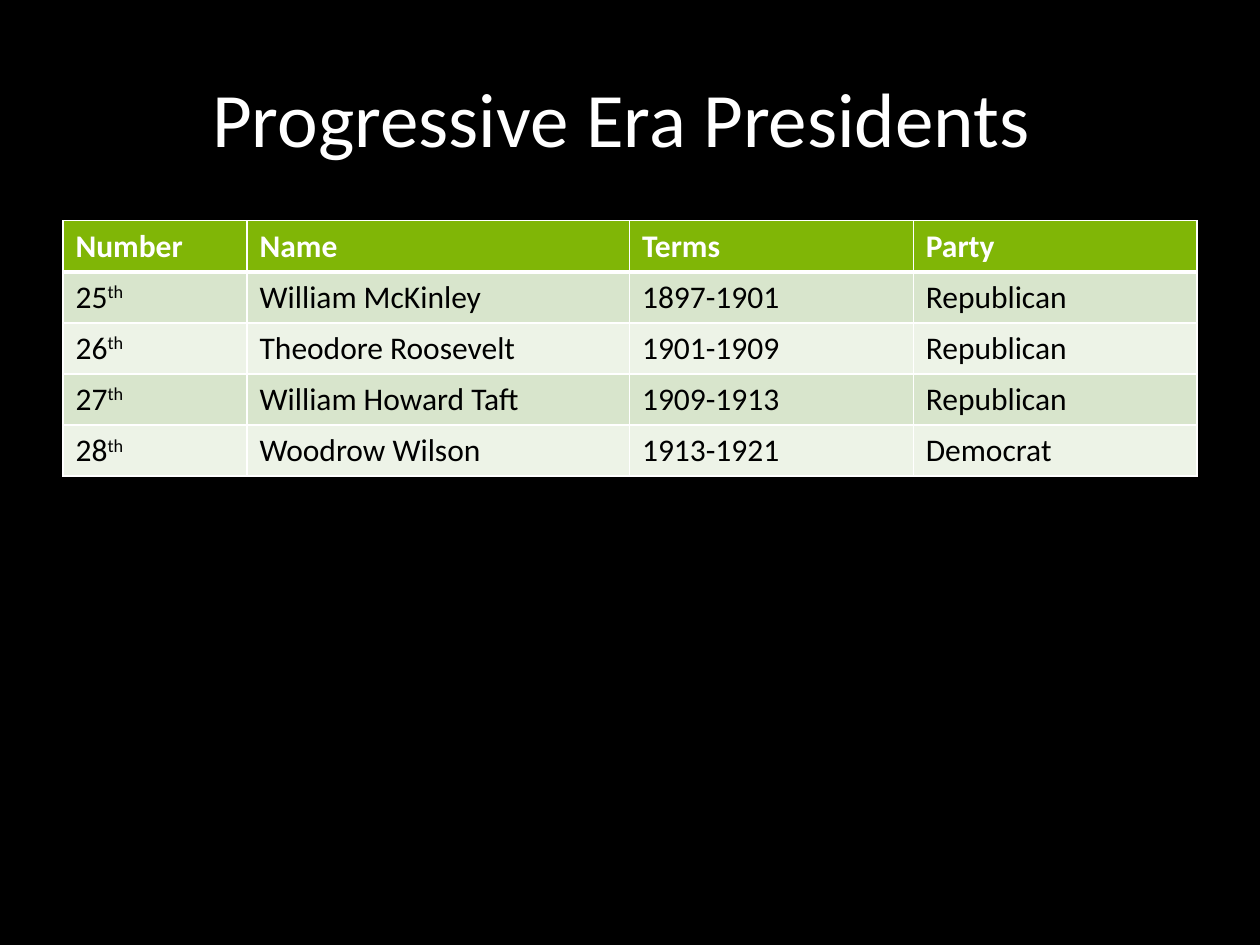
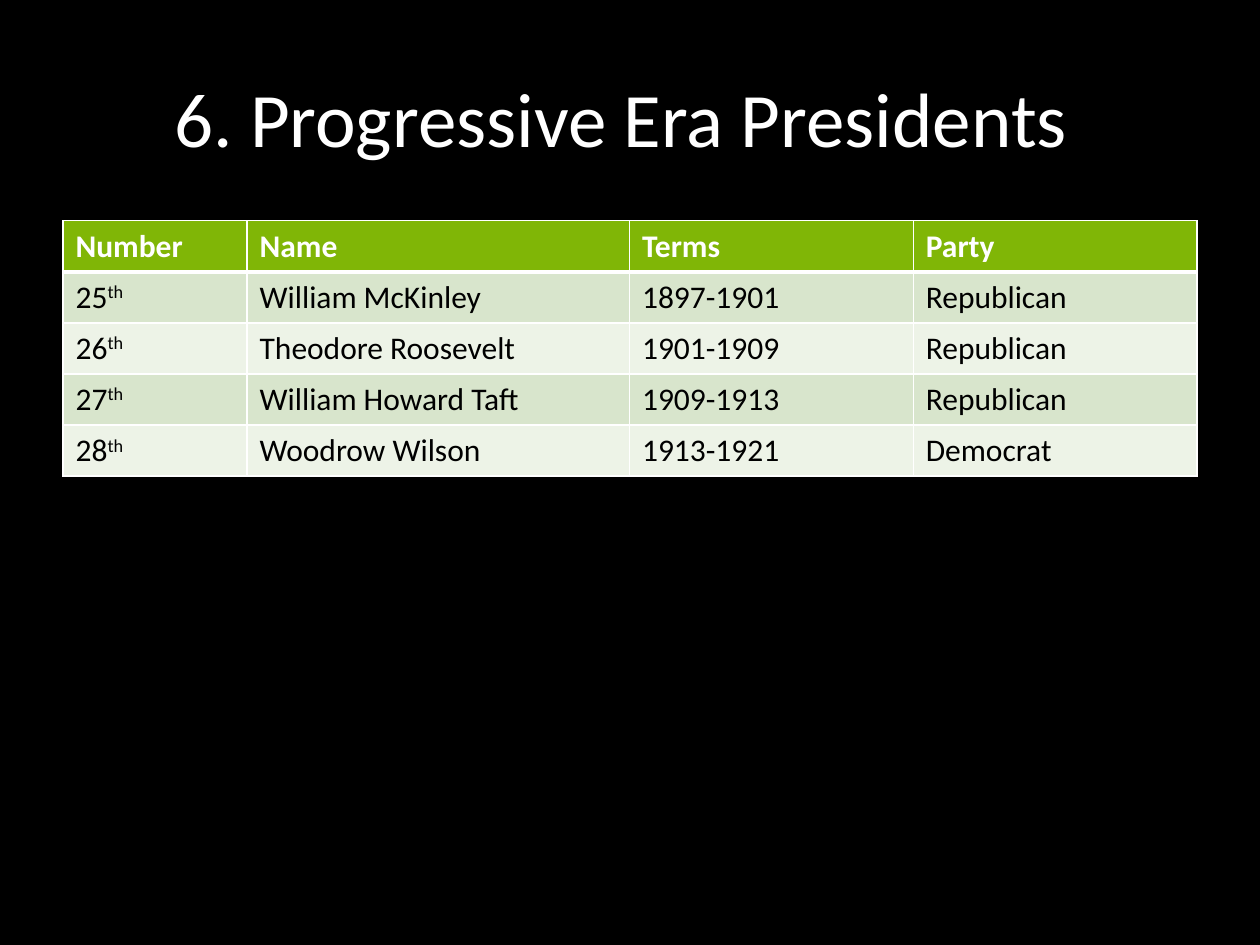
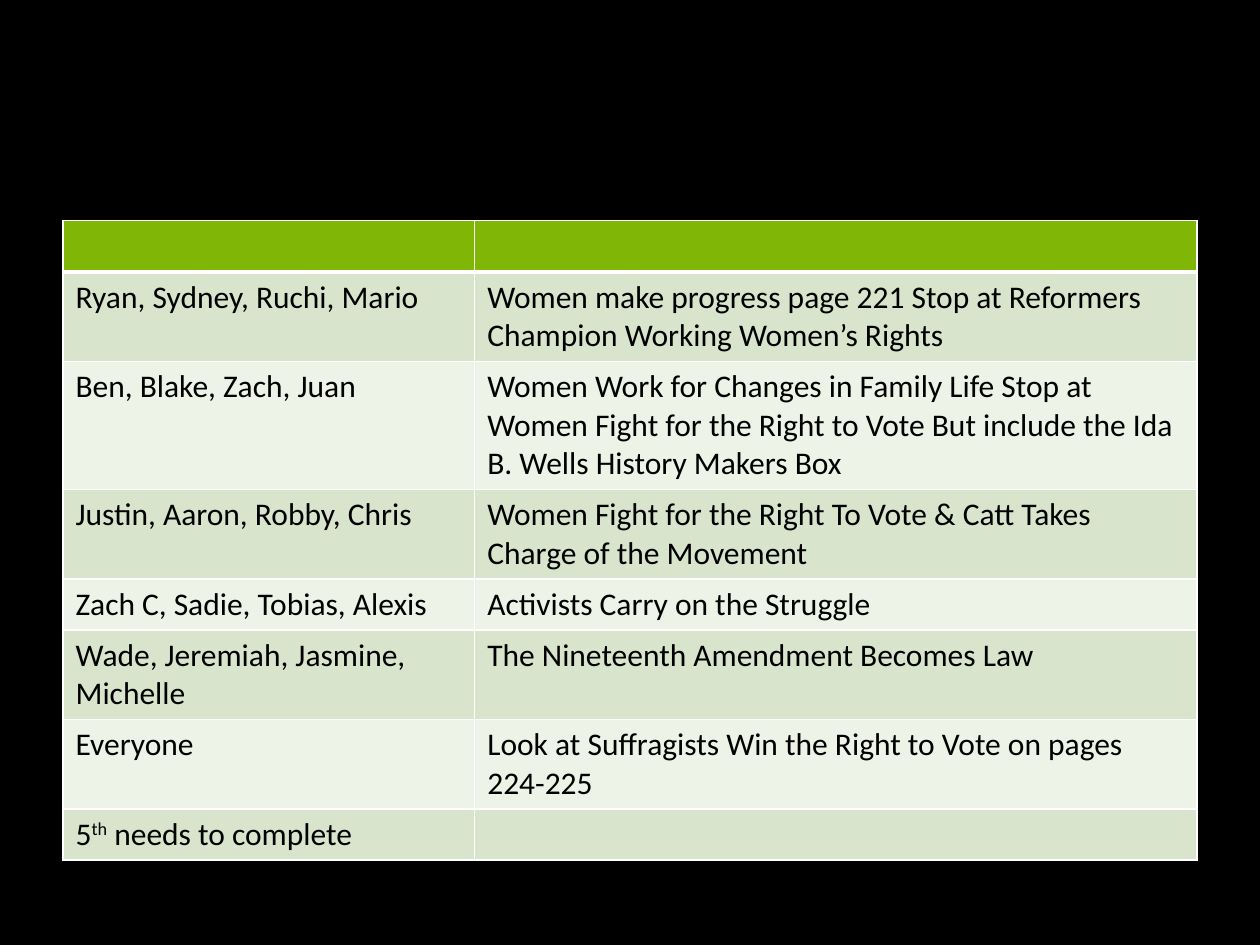
from dataclasses import dataclass

from lxml import etree
from pptx import Presentation
from pptx import util as u
from pptx.dml.color import RGBColor
from pptx.enum import text
from pptx.oxml.ns import qn
from pptx.slide import Slide
from pptx.table import _Cell
from pptx.text.text import _Paragraph

FONT = "Calibri"
COLORS = {
    "background": "000000",
    "title": "FFFFFF",
    "header": "80B606",
    "header_text": "FFFFFF",
    "odd_row": "D8E5CC",
    "even_row": "EDF3E7",
    "body_text": "000000",
    "border": "FFFFFF",
}
LEFT, WIDTH = u.Cm(1.27), u.Cm(22.86)
TITLE_TOP, TITLE_HEIGHT = u.Cm(0.76), u.Cm(3.18)
TABLE_TOP, ROW_HEIGHT = u.Cm(4.45), u.Cm(1.03)
TITLE_ONLY, BLANK = 5, 6
SUPERSCRIPT_MARK = "^"


@dataclass(frozen=True)
class Grid:
    column_widths: tuple[float, ...]
    rows: tuple[tuple[str, ...], ...]
    height: float


@dataclass(frozen=True)
class Page:
    title: str
    grid: Grid


PRESIDENTS = Grid(
    (3.71, 7.71, 5.72, 5.72),
    (
        ("Number", "Name", "Terms", "Party"),
        ("25^th", "William McKinley", "1897-1901", "Republican"),
        ("26^th", "Theodore Roosevelt", "1901-1909", "Republican"),
        ("27^th", "William Howard Taft", "1909-1913", "Republican"),
        ("28^th", "Woodrow Wilson", "1913-1921", "Democrat"),
    ),
    5.15,
)
READINGS = Grid(
    (8.3, 14.56),
    (
        ("", ""),
        ("Ryan, Sydney, Ruchi, Mario",
         "Women make progress page 221 Stop at Reformers Champion Working Women’s Rights"),
        ("Ben, Blake, Zach, Juan",
         "Women Work for Changes in Family Life Stop at Women Fight for the Right to Vote "
         "But include the Ida B. Wells History Makers Box"),
        ("Justin, Aaron, Robby, Chris",
         "Women Fight for the Right To Vote & Catt Takes Charge of the Movement"),
        ("Zach C, Sadie, Tobias, Alexis", "Activists Carry on the Struggle"),
        ("Wade, Jeremiah, Jasmine, Michelle", "The Nineteenth Amendment Becomes Law"),
        ("Everyone", "Look at Suffragists Win the Right to Vote on pages 224-225"),
        ("5^th^ needs to complete", ""),
    ),
    12.75,
)
PAGES = (
    Page("Progressive Era Presidents ", PRESIDENTS),
    Page("6. Progressive Era Presidents ", PRESIDENTS),
    Page("", READINGS),
)


def color(role: str) -> RGBColor:
    return RGBColor.from_string(COLORS[role])


def style_font(paragraph: _Paragraph, size: int, role: str, bold: bool = False) -> None:
    font = paragraph.font
    font.name, font.size, font.bold = FONT, u.Pt(size), bold
    font.color.rgb = color(role)


def write_marked(paragraph: _Paragraph, wording: str) -> None:
    for index, part in enumerate(wording.split(SUPERSCRIPT_MARK)):
        if part:
            run = paragraph.add_run()
            run.text = part
            if index % 2:
                run._r.get_or_add_rPr().set("baseline", "30000")


def add_borders(cell: _Cell, row: int) -> None:
    properties = cell._tc.get_or_add_tcPr()
    widths = {"lnL": 1, "lnR": 1, "lnT": 3 if row == 1 else 1, "lnB": 3 if row == 0 else 1}
    for edge, points in widths.items():
        line = etree.SubElement(properties, qn(f"a:{edge}"), w=str(u.Pt(points)))
        fill = etree.SubElement(line, qn("a:solidFill"))
        etree.SubElement(fill, qn("a:srgbClr"), val=COLORS["border"])


def fill_cell(cell: _Cell, row: int, wording: str) -> None:
    add_borders(cell, row)
    cell.fill.solid()
    role = "header" if row == 0 else "odd_row" if row % 2 else "even_row"
    cell.fill.fore_color.rgb = color(role)
    paragraph = cell.text_frame.paragraphs[0]
    write_marked(paragraph, wording)
    style_font(paragraph, 18, "body_text" if row else "header_text", bold=row == 0)


def add_grid(slide: Slide, grid: Grid) -> None:
    frame = slide.shapes.add_table(
        len(grid.rows), len(grid.column_widths), LEFT, TABLE_TOP, WIDTH, u.Cm(grid.height)
    )
    table = frame.table
    for column, width in zip(table.columns, grid.column_widths):
        column.width = u.Cm(width)
    for row, wordings in enumerate(grid.rows):
        table.rows[row].height = ROW_HEIGHT
        for column, wording in enumerate(wordings):
            fill_cell(table.cell(row, column), row, wording)
    frame.height = u.Cm(grid.height)


def place_title(slide: Slide, wording: str) -> None:
    title = slide.shapes.title
    title.left, title.top, title.width, title.height = LEFT, TITLE_TOP, WIDTH, TITLE_HEIGHT
    title.text_frame.text = wording
    title.text_frame.vertical_anchor = text.MSO_ANCHOR.MIDDLE
    paragraph = title.text_frame.paragraphs[0]
    paragraph.alignment = text.PP_ALIGN.CENTER
    style_font(paragraph, 44, "title")


def main() -> None:
    deck = Presentation()
    deck.slide_width, deck.slide_height = u.Cm(25.4), u.Cm(19.05)
    backdrop = deck.slide_master.background.fill
    backdrop.solid()
    backdrop.fore_color.rgb = color("background")
    for page in PAGES:
        layout = deck.slide_layouts[TITLE_ONLY if page.title else BLANK]
        slide = deck.slides.add_slide(layout)
        if page.title:
            place_title(slide, page.title)
        add_grid(slide, page.grid)
    deck.save("out.pptx")


if __name__ == "__main__":
    main()
